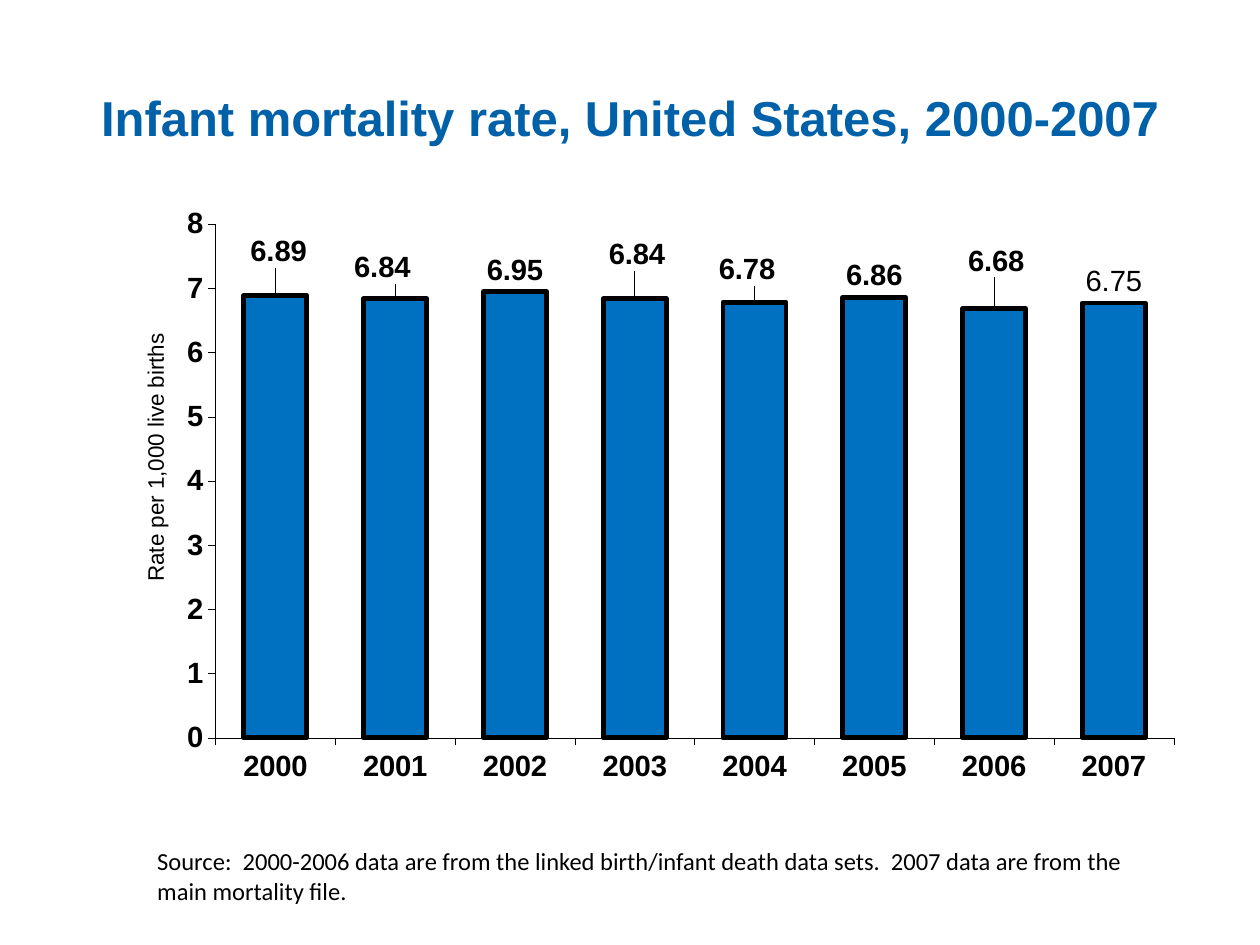
import pptx
import pptx.chart.data
import pptx.dml.color
import pptx.enum.chart
import pptx.enum.text
import pptx.oxml
import pptx.oxml.ns
import pptx.util
from pptx.util import Cm, Pt

BLACK, BLUE, TITLE_BLUE = "000000", "0070C0", "0060A8"
CHART_SIZE = 16.7
YEARS = [str(year) for year in range(2000, 2008)]
RATES = [6.89, 6.84, 6.95, 6.84, 6.78, 6.86, 6.68, 6.77]
# Shift of single value labels, as a share of the chart's width and height
LABEL_SHIFTS = {0: (0.003, -0.034), 1: (-0.012, -0.014), 3: (0.002, -0.034),
                4: (-0.007, -0.017), 6: (0.002, -0.04)}


def colour(code):
    return pptx.dml.color.RGBColor.from_string(code)


def format_font(font, size, code=BLACK, bold=False, name="Arial"):
    font.size, font.bold, font.name = Pt(size), bold, name
    font.color.rgb = colour(code)


def write_text(frame, text, align=None, **style):
    para = frame.paragraphs[0]
    para.alignment = align
    span = para.add_run()
    span.text = text
    format_font(span.font, **style)


def set_layout(parent, after, **settings):
    """Place a chart part by hand; its layout follows the named child."""
    for old in parent.findall(pptx.oxml.ns.qn("c:layout")):
        parent.remove(old)
    items = "".join(f'<c:{key} val="{value}"/>' for key, value in settings.items())
    layout = pptx.oxml.parse_xml(
        f'<c:layout {pptx.oxml.ns.nsdecls("c")}>'
        f"<c:manualLayout>{items}</c:manualLayout></c:layout>")
    if after:
        parent.find(pptx.oxml.ns.qn(after)).addnext(layout)
    else:
        parent.insert(0, layout)


def place_title(page, left, top, width, height):
    title = page.shapes.title
    title.left, title.top, title.width, title.height = left, top, width, height
    title.text_frame.word_wrap = True
    title.text_frame.vertical_anchor = pptx.enum.text.MSO_ANCHOR.MIDDLE
    write_text(title.text_frame, "Infant mortality rate, United States, 2000-2007",
               align=pptx.enum.text.PP_ALIGN.CENTER, size=28, code=TITLE_BLUE, bold=True)


def format_axes(chart):
    for axis in (chart.category_axis, chart.value_axis):
        axis.has_major_gridlines = False
        axis.major_tick_mark = pptx.enum.chart.XL_TICK_MARK.OUTSIDE
        axis.minor_tick_mark = pptx.enum.chart.XL_TICK_MARK.NONE
        axis.format.line.color.rgb = colour(BLACK)
        axis.format.line.width = Pt(0.23)
        format_font(axis.tick_labels.font, CHART_SIZE, bold=True)

    axis = chart.value_axis
    axis.minimum_scale, axis.maximum_scale, axis.major_unit = 0, 8, 1
    axis.tick_labels.number_format = "0"
    axis.tick_labels.number_format_is_linked = False
    write_text(axis.axis_title.text_frame, "Rate per 1,000 live births", size=12.8)
    set_layout(axis.axis_title.element, "c:tx",
               xMode="edge", yMode="edge", x=0.02, y=0.23)


def format_labels(chart, series):
    outside = pptx.enum.chart.XL_LABEL_POSITION.OUTSIDE_END
    labels = series.data_labels
    labels.show_value = True
    labels.position = outside
    format_font(labels.font, CHART_SIZE, bold=True)

    for index in LABEL_SHIFTS:
        label = series.points[index].data_label
        label.position = outside
        format_font(label.font, CHART_SIZE, bold=True)
    for element in chart.element.iter(pptx.oxml.ns.qn("c:dLbl")):
        index = int(element.find(pptx.oxml.ns.qn("c:idx")).get("val"))
        x, y = LABEL_SHIFTS[index]
        set_layout(element, "c:idx", x=x, y=y)

    # The last label carries its own wording
    last = series.points[len(RATES) - 1].data_label
    write_text(last.text_frame, "6.75", size=CHART_SIZE)
    last.position = outside


def place_chart(page, left, top, width, height):
    data = pptx.chart.data.CategoryChartData()
    data.categories = YEARS
    data.add_series("Series 1", RATES)
    chart = page.shapes.add_chart(
        pptx.enum.chart.XL_CHART_TYPE.COLUMN_CLUSTERED,
        left, top, width, height, data).chart
    chart.has_legend = False
    chart.has_title = False
    format_font(chart.font, CHART_SIZE, bold=True)

    # Bars
    plot = chart.plots[0]
    plot.gap_width = 90
    plot.vary_by_categories = False
    series = plot.series[0]
    series.format.fill.solid()
    series.format.fill.fore_color.rgb = colour(BLUE)
    series.format.line.color.rgb = colour(BLACK)
    series.format.line.width = Pt(2.79)

    format_axes(chart)
    format_labels(chart, series)
    plot_area = next(chart.element.iter(pptx.oxml.ns.qn("c:plotArea")))
    set_layout(plot_area, None, layoutTarget="inner", xMode="edge", yMode="edge",
               x=0.093, y=0.069, w=0.896, h=0.786)


def place_source(page, left, top, width, height):
    box = page.shapes.add_textbox(left, top, width, height)
    box.text_frame.word_wrap = True
    box.text_frame.auto_size = pptx.enum.text.MSO_AUTO_SIZE.SHAPE_TO_FIT_TEXT
    write_text(box.text_frame,
               "Source:  2000-2006 data are from the linked birth/infant death data sets.  "
               "2007 data are from the main mortality file.",
               size=14, name="Calibri")


def main():
    deck = pptx.Presentation()
    deck.slide_width, deck.slide_height = Cm(25.4), Cm(19.05)
    page = deck.slides.add_slide(deck.slide_layouts.get_by_name("Title Only"))
    place_title(page, Cm(1.27), Cm(0.76), Cm(22.86), Cm(3.18))
    place_chart(page, Cm(2.34), Cm(3.61), Cm(21.56), Cm(13.18))
    place_source(page, Cm(2.92), Cm(16.94), Cm(20.14), Cm(1.45))
    deck.save("out.pptx")


if __name__ == "__main__":
    main()
